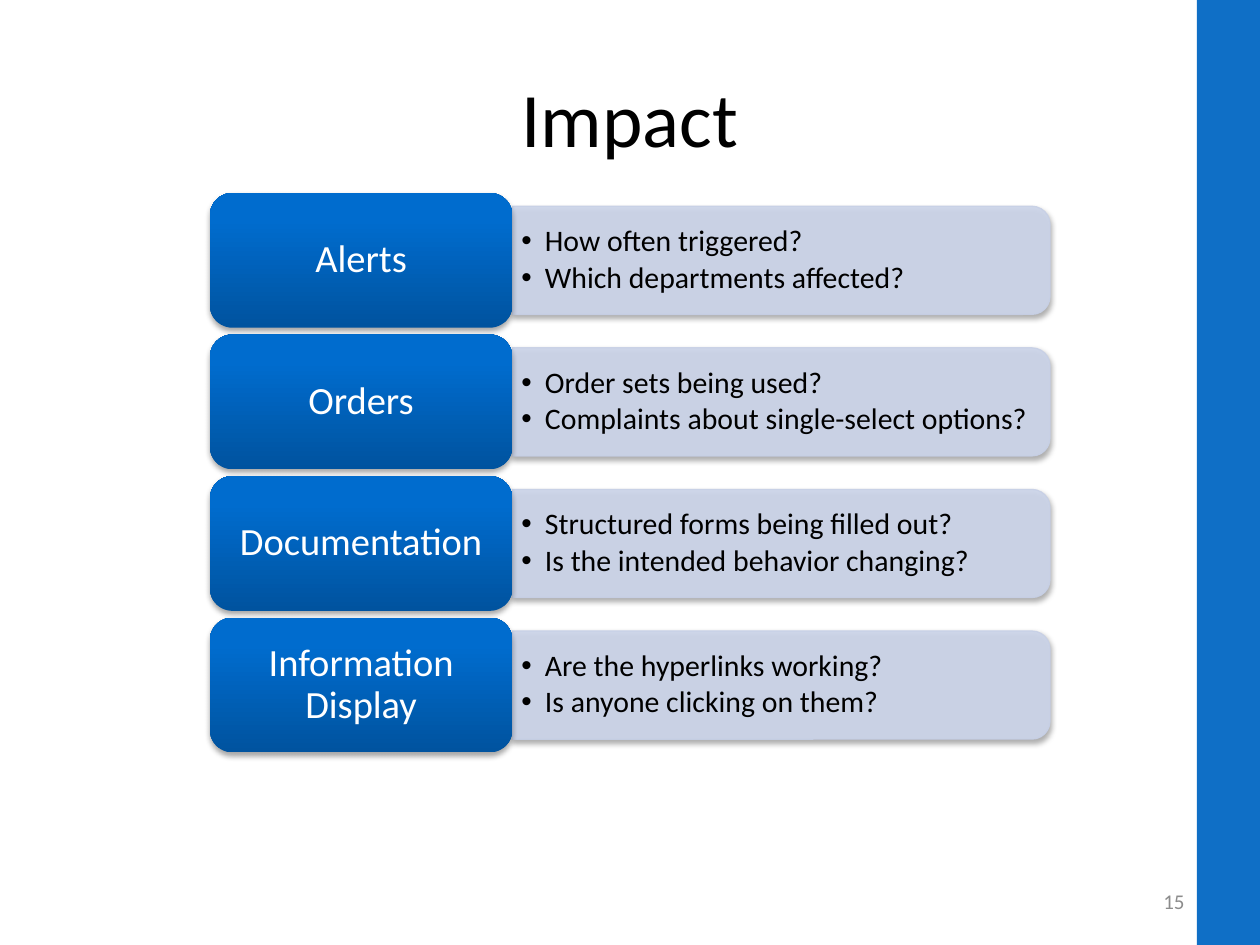
import pptx
import pptx.util
import pptx.dml.color
import pptx.enum.shapes
import pptx.enum.text
import pptx.oxml.ns
from dataclasses import dataclass
from lxml import etree

Pt = pptx.util.Pt
qn = pptx.oxml.ns.qn
Kind = pptx.enum.shapes.MSO_SHAPE
Align = pptx.enum.text.PP_ALIGN
Anchor = pptx.enum.text.MSO_ANCHOR

FONT = "Calibri"
COLORS = {
    "bar": "0F6FC6",
    "text": "000000",
    "number": "8C8C8C",
    "label": "FFFFFF",
    "panel": "CCD5EA",
    "edge": "C7D0E6",
    "shadow": "000000",
    "deep": "00539F",
    "mid": "006CCE",
    "light": "006DCF",
}
STOPS = ((0, "deep"), (80, "mid"), (100, "light"))

LEFT, TOP, STEP = 120, 110.3, 80.9
TILE_W, TILE_H = 172.8, 77
PANEL_W, PANEL_H = 307.2, 61.8
TEXT_W, TEXT_H = 303.8, 55.4


@dataclass
class Topic:
    name: str
    points: tuple[str, ...]


TOPICS = (
    Topic("Alerts", ("How often triggered?", "Which departments affected?")),
    Topic("Orders", ("Order sets being used?", "Complaints about single-select options?")),
    Topic("Documentation", ("Structured forms being filled out?", "Is the intended behavior changing?")),
    Topic("Information Display", ("Are the hyperlinks working?", "Is anyone clicking on them?")),
)


def color(key: str) -> pptx.dml.color.RGBColor:
    return pptx.dml.color.RGBColor.from_string(COLORS[key])


def add(parent, tag: str, **attrs):
    return etree.SubElement(parent, qn(tag), {k: str(v) for k, v in attrs.items()})


def style(para, size: float, key: str) -> None:
    para.font.name = FONT
    para.font.size = Pt(size)
    para.font.color.rgb = color(key)


def setup(shape, pad_x: float, pad_y: float):
    frame = shape.text_frame
    frame.word_wrap = True
    frame.vertical_anchor = Anchor.MIDDLE
    frame.margin_left = frame.margin_right = Pt(pad_x)
    frame.margin_top = frame.margin_bottom = Pt(pad_y)
    return frame


def write(shape, text: str, size: float, key: str, align, pad_x: float = 7.2, pad_y: float = 3.6):
    para = setup(shape, pad_x, pad_y).paragraphs[0]
    para.text = text
    para.alignment = align
    style(para, size, key)
    return para


def box(slide, x: float, y: float, w: float, h: float):
    return slide.shapes.add_textbox(Pt(x), Pt(y), Pt(w), Pt(h))


def block(slide, kind, x: float, y: float, w: float, h: float):
    shape = slide.shapes.add_shape(kind, Pt(x), Pt(y), Pt(w), Pt(h))
    shape.line.fill.background()
    shape.shadow.inherit = False
    return shape


def shade(shape) -> None:
    effects = shape.element.spPr.find(qn("a:effectLst"))
    outer = add(effects, "a:outerShdw", blurRad=Pt(3.15), dist=Pt(1.8), dir=5400000, rotWithShape=0)
    add(add(outer, "a:srgbClr", val=COLORS["shadow"]), "a:alpha", val=35000)


def blend(shape) -> None:
    shape.fill.gradient()
    shape.fill.gradient_angle = 90
    stops = shape.element.spPr.find(".//" + qn("a:gsLst"))
    for old in list(stops):
        stops.remove(old)
    for place, key in STOPS:
        add(add(stops, "a:gs", pos=place * 1000), "a:srgbClr", val=COLORS[key])


def panel(slide, x: float, mid: float) -> None:
    shape = block(slide, Kind.ROUND_2_SAME_RECTANGLE, x + (PANEL_W - PANEL_H) / 2,
                  mid - PANEL_W / 2, PANEL_H, PANEL_W)
    shape.rotation = 90
    shape.fill.solid()
    shape.fill.fore_color.rgb = color("panel")
    shape.line.color.rgb = color("edge")
    shape.line.width = Pt(0.75)
    for tint in shape.element.spPr.findall(".//" + qn("a:srgbClr")):
        add(tint, "a:alpha", val=90000)
    shade(shape)


def bullets(slide, x: float, mid: float, points: tuple[str, ...]) -> None:
    frame = setup(box(slide, x, mid - TEXT_H / 2, TEXT_W, TEXT_H), 5.1, 2.6)
    for i, point in enumerate(points):
        para = frame.add_paragraph() if i else frame.paragraphs[0]
        para.text = point
        para.level = 1
        para.line_spacing = 0.9
        para.space_after = Pt(2.5)
        props = para._p.get_or_add_pPr()
        props.set("marL", str(Pt(13.5)))
        props.set("indent", str(-Pt(13.5)))
        add(props, "a:buFont", typeface="Arial")
        add(props, "a:buChar", char="•")
        style(para, 17, "text")


def tile(slide, x: float, y: float, name: str) -> None:
    shape = block(slide, Kind.ROUNDED_RECTANGLE, x, y, TILE_W, TILE_H)
    blend(shape)
    shade(shape)
    write(shape, name, 22, "label", Align.CENTER, 6.6, 3.3).line_spacing = 0.9


def main() -> None:
    deck = pptx.Presentation()
    deck.slide_width, deck.slide_height = Pt(720), Pt(540)
    slide = deck.slides.add_slide(deck.slide_layouts[6])
    bar = block(slide, Kind.RECTANGLE, 684, 0, 36, 540)
    bar.fill.solid()
    bar.fill.fore_color.rgb = color("bar")
    write(box(slide, 36, 21.6, 648, 90), "Impact", 44, "text", Align.CENTER)
    write(box(slide, 516, 500.5, 168, 28.75), "15", 12, "number", Align.RIGHT)
    for i, topic in enumerate(TOPICS):
        y = TOP + i * STEP
        mid = y + TILE_H / 2
        panel(slide, LEFT + TILE_W, mid)
        bullets(slide, LEFT + TILE_W, mid, topic.points)
        tile(slide, LEFT, y, topic.name)
    deck.save("out.pptx")


if __name__ == "__main__":
    main()
